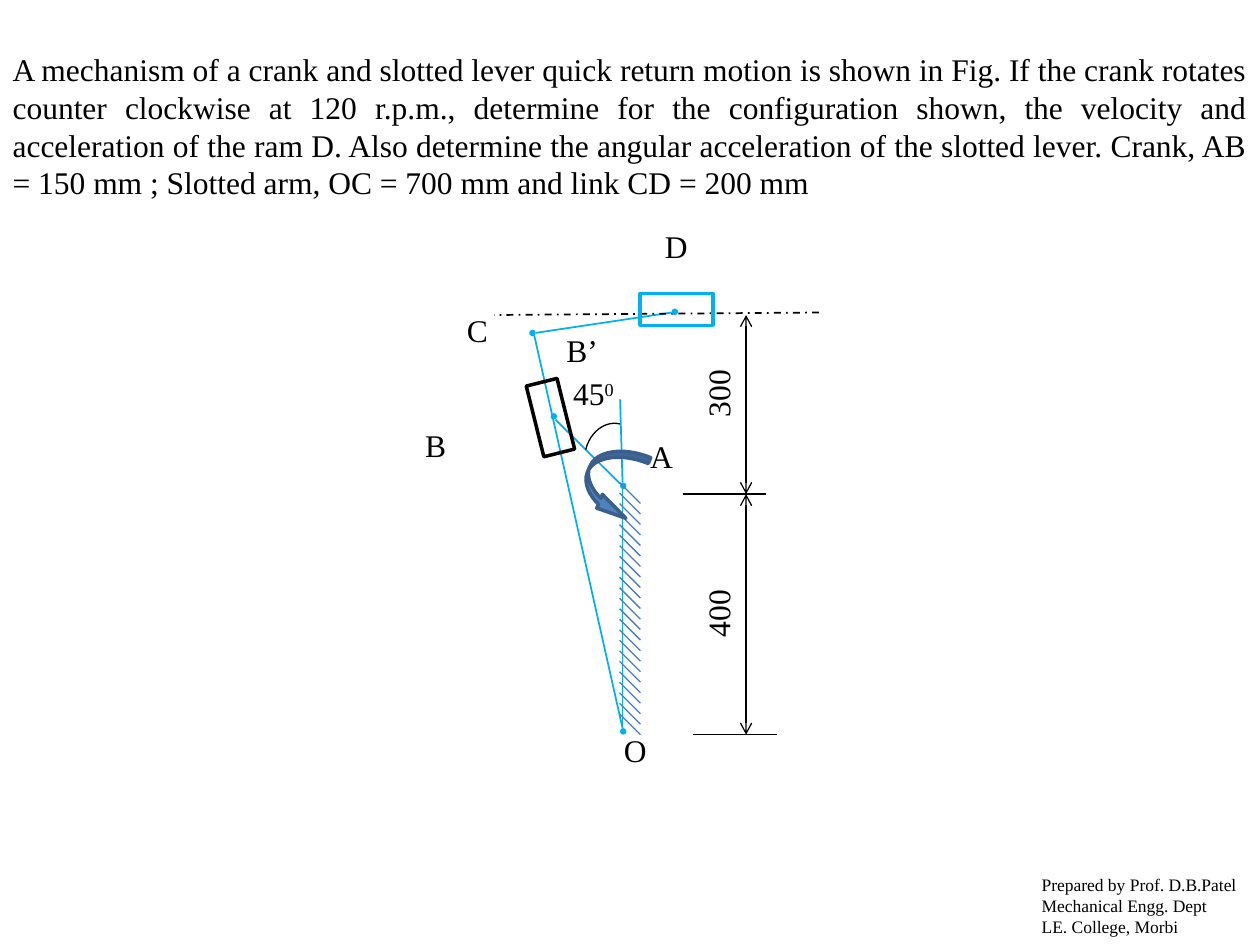
from dataclasses import dataclass

from lxml import etree
from pptx import Presentation
from pptx.dml.color import RGBColor
from pptx.enum.dml import MSO_LINE
from pptx.enum.shapes import MSO_CONNECTOR, MSO_SHAPE
from pptx.enum.text import MSO_ANCHOR, MSO_AUTO_SIZE, PP_ALIGN
from pptx.oxml.ns import qn
from pptx.util import Cm, Pt

STRAIGHT = MSO_CONNECTOR.STRAIGHT
RECT, OVAL, ARC = MSO_SHAPE.RECTANGLE, MSO_SHAPE.OVAL, MSO_SHAPE.ARC
TURN_ARROW = MSO_SHAPE.CURVED_RIGHT_ARROW
DASH_DOT = MSO_LINE.DASH_DOT
MIDDLE = MSO_ANCHOR.MIDDLE
GROW, FIXED = MSO_AUTO_SIZE.SHAPE_TO_FIT_TEXT, MSO_AUTO_SIZE.NONE
LEFT, CENTER, JUSTIFY = PP_ALIGN.LEFT, PP_ALIGN.CENTER, PP_ALIGN.JUSTIFY

COLORS = {"link": "00B0F0", "ink": "000000", "hatch": "4B7EBC",
          "turn": "4F81BD", "turn_edge": "3A5F8C"}
FONT = "Times New Roman"
PROBLEM = (
    "A mechanism of a crank and slotted lever quick return motion is shown in Fig. "
    "If the crank rotates counter clockwise at 120 r.p.m., determine for the "
    "configuration shown, the velocity and acceleration of the ram D. Also determine "
    "the angular acceleration of the slotted lever. Crank, AB = 150 mm ; "
    "Slotted arm, OC = 700 mm and link CD = 200 mm"
)


# Positions and sizes are in centimetres
@dataclass
class Line:
    x1: float
    y1: float
    x2: float
    y2: float
    color: str = "link"
    width: float = 1
    dash: bool = False
    arrows: bool = False


@dataclass
class Figure:
    kind: int
    x: float
    y: float
    w: float
    h: float
    fill: str = ""
    line: str = ""
    width: float = 2
    rotation: float = 0
    adjust: tuple = ()


@dataclass
class Label:
    text: str
    x: float
    y: float
    w: float = 1.47
    h: float = 1.02
    rotation: float = 0
    superscript: str = ""


def rgb(name: str) -> RGBColor:
    return RGBColor.from_string(COLORS[name])


def add_line(shapes, d: Line) -> None:
    s = shapes.add_connector(STRAIGHT, Cm(d.x1), Cm(d.y1), Cm(d.x2), Cm(d.y2))
    s.line.color.rgb = rgb(d.color)
    s.line.width = Pt(d.width)
    if d.dash:
        s.line.dash_style = DASH_DOT
    if d.arrows:
        ln = s.line._get_or_add_ln()
        for end in ("a:headEnd", "a:tailEnd"):
            etree.SubElement(ln, qn(end), type="arrow")
    etree.SubElement(s._element.spPr, qn("a:effectLst"))


def add_figure(shapes, d: Figure) -> None:
    s = shapes.add_shape(d.kind, Cm(d.x), Cm(d.y), Cm(d.w), Cm(d.h))
    s.shadow.inherit = False
    s.rotation = d.rotation
    for i, value in enumerate(d.adjust):
        s.adjustments[i] = value
    if d.fill:
        s.fill.solid()
        s.fill.fore_color.rgb = rgb(d.fill)
    else:
        s.fill.background()
    if d.line:
        s.line.color.rgb = rgb(d.line)
        s.line.width = Pt(d.width)
    else:
        s.line.fill.background()


def add_run(p, text: str, size: float):
    r = p.add_run()
    r.text = text
    for name, value in {"name": FONT, "size": Pt(size), "bold": False}.items():
        setattr(r.font, name, value)
    r.font.color.rgb = rgb("ink")
    return r


def add_box(shapes, x: float, y: float, w: float, h: float):
    s = shapes.add_textbox(Cm(x), Cm(y), Cm(w), Cm(h))
    s.text_frame.word_wrap = True
    s.text_frame.auto_size = GROW
    return s


def add_label(shapes, d: Label) -> None:
    s = add_box(shapes, d.x, d.y, d.w, d.h)
    s.rotation = d.rotation
    p = s.text_frame.paragraphs[0]
    p.alignment = CENTER
    add_run(p, d.text, 18)
    if d.superscript:
        r = add_run(p, d.superscript, 18)
        r._r.get_or_add_rPr().set("baseline", "30000")


def main() -> None:
    prs = Presentation()
    prs.slide_width, prs.slide_height = Cm(25.4), Cm(19.05)
    slide = prs.slides.add_slide(prs.slide_layouts[5])
    shapes = slide.shapes

    # Problem statement
    title = shapes.title
    place = {"left": 0, "top": 0.84, "width": 25.4, "height": 3.38}
    for name, value in place.items():
        setattr(title, name, Cm(value))
    tf = title.text_frame
    for name, value in {"word_wrap": True, "auto_size": FIXED,
                        "vertical_anchor": MIDDLE}.items():
        setattr(tf, name, value)
    p = tf.paragraphs[0]
    p.alignment = JUSTIFY
    add_run(p, PROBLEM, 18)

    # Links: frame, connecting link, ram path, slotted lever, crank, vertical
    for link in (
        Line(12.55, 9.86, 12.55, 14.68),
        Line(13.54, 6.3, 10.8, 6.71),
        Line(16.51, 6.3, 9.96, 6.35, "ink", dash=True),
        Line(10.77, 6.76, 12.55, 14.68),
        Line(12.5, 9.75, 11.2, 8.46),
        Line(12.5, 8.05, 12.55, 9.73),
    ):
        add_line(shapes, link)

    # Ram, pin joints, crank angle and slider
    add_figure(shapes, Figure(RECT, 12.9, 5.92, 1.47, 0.64, line="link"))
    for x, y in ((11.1, 8.33), (12.5, 14.68), (12.5, 9.73), (10.67, 6.65), (13.54, 6.22)):
        add_figure(shapes, Figure(OVAL, x, y, 0.13, 0.13, fill="link"))
    add_figure(shapes, Figure(ARC, 11.68, 8.64, 1.32, 1.09, line="ink", width=0.75,
                              rotation=283.9, adjust=(161.53, 0.02)))
    add_figure(shapes, Figure(RECT, 10.36, 8.1, 1.47, 0.64, line="ink", rotation=76))

    # Dimension lines
    for dim in (
        Line(13.77, 9.96, 15.44, 9.96, "ink", 0.75),
        Line(13.97, 14.81, 15.67, 14.81, "ink", 0.75),
        Line(15.04, 6.35, 15.04, 9.96, "ink", 0.75, arrows=True),
        Line(15.04, 9.96, 15.04, 14.81, "ink", 0.75, arrows=True),
    ):
        add_line(shapes, dim)

    # Hatching of the fixed frame
    count, top, bottom, side = 23, 9.73, 14.39, 0.42
    for i in range(count):
        y = top + i * (bottom - top) / (count - 1)
        add_line(shapes, Line(12.49, y, 12.49 + side, y + side, "hatch", 0.75))

    # Point names and dimensions
    for label in (
        Label("O", 12.07, 14.61, h=1.07),
        Label("A", 12.7, 8.69, w=1.27),
        Label("B’", 11, 6.55),
        Label("B", 8.05, 8.46),
        Label("C", 8.89, 6.15),
        Label("D", 12.9, 4.45),
        Label("45", 11.23, 7.42, superscript="0"),
        Label("300", 13.74, 7.42, rotation=270),
        Label("400", 13.74, 11.86, rotation=270),
    ):
        add_label(shapes, label)

    # Direction of rotation
    add_figure(shapes, Figure(TURN_ARROW, 11.81, 8.97, 1.07, 1.47, "turn", "turn_edge",
                              rotation=22.2, adjust=(0.12, 0.28, 0.58)))

    # Author
    tf = add_box(shapes, 20.75, 17.5, 4.65, 1.55).text_frame
    for i, text in enumerate(("Prepared by Prof. D.B.Patel", "Mechanical Engg. Dept",
                              "LE. College, Morbi")):
        p = tf.add_paragraph() if i else tf.paragraphs[0]
        p.alignment = LEFT
        add_run(p, text, 10)

    prs.save("out.pptx")


if __name__ == "__main__":
    main()
